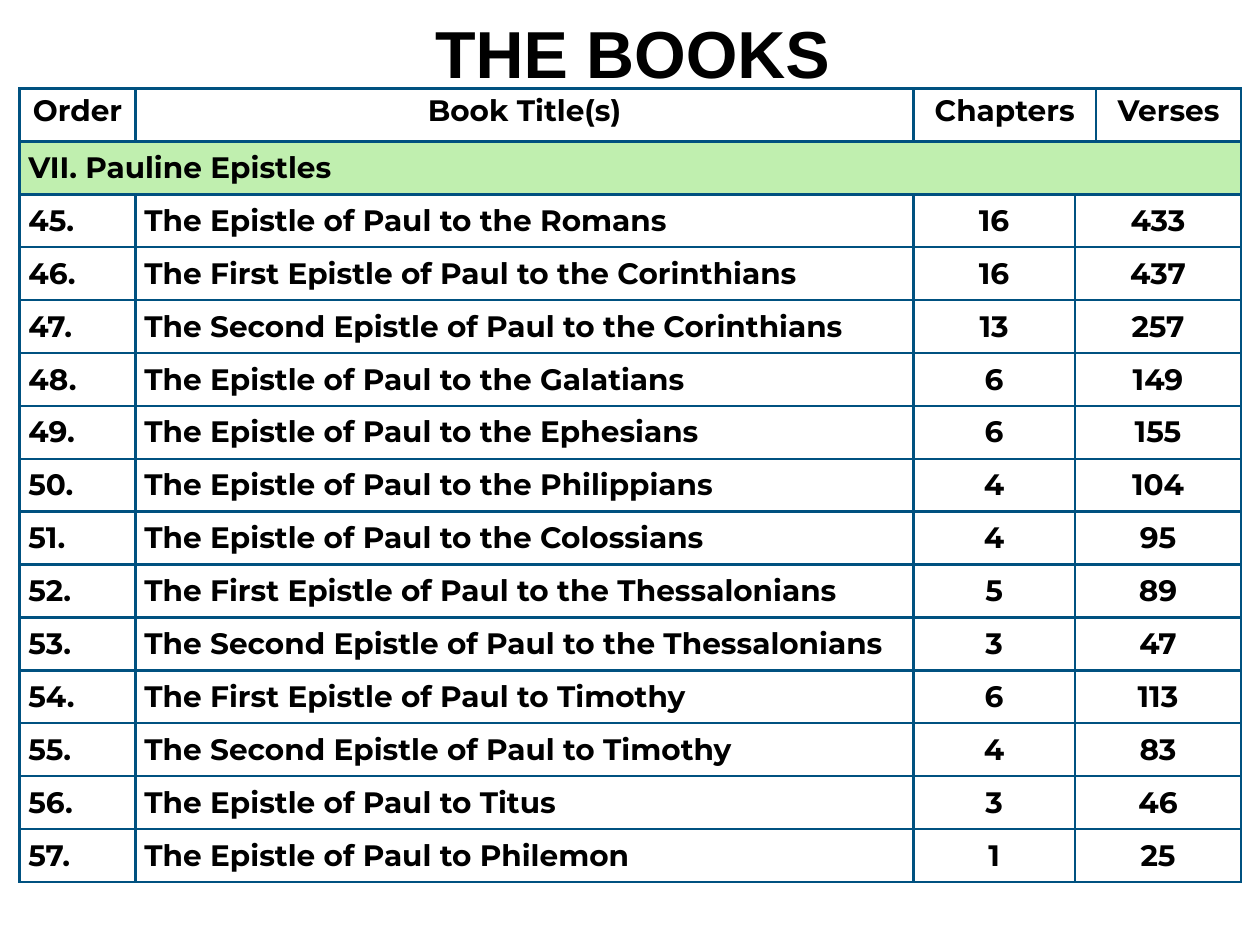
from dataclasses import dataclass
from typing import NamedTuple

from lxml import etree
from pptx import Presentation
from pptx.dml.color import RGBColor
from pptx.enum.text import MSO_ANCHOR, MSO_AUTO_SIZE, PP_ALIGN
from pptx.oxml.ns import qn
from pptx.util import Emu, Inches, Pt

LEFT, CENTER = PP_ALIGN.LEFT, PP_ALIGN.CENTER
TOP, MIDDLE = MSO_ANCHOR.TOP, MSO_ANCHOR.MIDDLE
NO_AUTOFIT = MSO_AUTO_SIZE.NONE

SLIDE_WIDTH, SLIDE_HEIGHT = Inches(14.22), Inches(10.67)
TITLE_ONLY_LAYOUT = 5


@dataclass(frozen=True)
class Theme:
    text: str = "000000"
    border: str = "005180"
    section_fill: str = "C0EFAF"
    title_font: str = "Arial"
    table_font: str = "Montserrat"
    title_size: float = 54
    table_size: float = 24
    border_width: float = 2.25
    title_inset: float = 0.06


class Box(NamedTuple):
    """A frame in percent of the slide's width and height."""
    left: float
    top: float
    width: float
    height: float


class Book(NamedTuple):
    title: str
    chapters: int
    verses: int


class CellContent(NamedTuple):
    text: str
    column: int
    last_column: int
    align: PP_ALIGN = LEFT
    anchor: MSO_ANCHOR = MIDDLE
    fill: str | None = None


THEME = Theme()
TITLE_BOX = Box(7.52, -5.53, 85.37, 22.12)
TABLE_LEFT, TABLE_TOP = 1.55, 9.37
COLUMN_WIDTHS = (9.21, 61.74, 12.8, 1.69, 11.53)
ROW_HEIGHT = 5.6
FIRST_ORDER = 45

HEADER = [
    CellContent("Order", 0, 0, CENTER, TOP),
    CellContent("Book Title(s)", 1, 1, CENTER, TOP),
    CellContent("Chapters", 2, 3, CENTER, TOP),
    CellContent("Verses", 4, 4, CENTER, TOP),
]
SECTION = [CellContent("VII. Pauline Epistles", 0, 4, fill=THEME.section_fill)]
BOOKS = [
    Book("The Epistle of Paul to the Romans", 16, 433),
    Book("The First Epistle of Paul to the Corinthians", 16, 437),
    Book("The Second Epistle of Paul to the Corinthians", 13, 257),
    Book("The Epistle of Paul to the Galatians", 6, 149),
    Book("The Epistle of Paul to the Ephesians", 6, 155),
    Book("The Epistle of Paul to the Philippians", 4, 104),
    Book("The Epistle of Paul to the Colossians", 4, 95),
    Book("The First Epistle of Paul to the Thessalonians", 5, 89),
    Book("The Second Epistle of Paul to the Thessalonians", 3, 47),
    Book("The First Epistle of Paul to Timothy", 6, 113),
    Book("The Second Epistle of Paul to Timothy", 4, 83),
    Book("The Epistle of Paul to Titus", 3, 46),
    Book("The Epistle of Paul to Philemon", 1, 25),
]


def across(percent: float) -> Emu:
    return Emu(round(SLIDE_WIDTH * percent / 100))


def down(percent: float) -> Emu:
    return Emu(round(SLIDE_HEIGHT * percent / 100))


def write_text(text_frame, text: str, *, font: str, size: float,
               align: PP_ALIGN = LEFT) -> None:
    paragraph = text_frame.paragraphs[0]
    paragraph.alignment = align
    run = paragraph.add_run()
    run.text = text
    run.font.name = font
    run.font.size = Pt(size)
    run.font.bold = True
    run.font.color.rgb = RGBColor.from_string(THEME.text)


def add_borders(cell) -> None:
    properties = cell._tc.get_or_add_tcPr()
    for index, side in enumerate(("a:lnL", "a:lnR", "a:lnT", "a:lnB")):
        line = etree.Element(qn(side), w=str(Pt(THEME.border_width)))
        fill = etree.SubElement(line, qn("a:solidFill"))
        etree.SubElement(fill, qn("a:srgbClr"), val=THEME.border)
        properties.insert(index, line)


def book_cells(order: int, book: Book) -> list[CellContent]:
    return [
        CellContent(f"{order}.", 0, 0),
        CellContent(book.title, 1, 1),
        CellContent(str(book.chapters), 2, 2, CENTER),
        CellContent(str(book.verses), 3, 4, CENTER),
    ]


def fill_cell(table, row: int, content: CellContent) -> None:
    cell = table.cell(row, content.column)
    if content.last_column > content.column:
        cell.merge(table.cell(row, content.last_column))
    cell.vertical_anchor = content.anchor
    if content.fill:
        cell.fill.solid()
        cell.fill.fore_color.rgb = RGBColor.from_string(content.fill)
    write_text(cell.text_frame, content.text, font=THEME.table_font,
               size=THEME.table_size, align=content.align)


def format_title(title) -> None:
    title.left, title.top = across(TITLE_BOX.left), down(TITLE_BOX.top)
    title.width, title.height = across(TITLE_BOX.width), down(TITLE_BOX.height)
    frame = title.text_frame
    frame.auto_size = NO_AUTOFIT
    frame.word_wrap = True
    frame.vertical_anchor = MIDDLE
    inset = Inches(THEME.title_inset)
    frame.margin_left = frame.margin_right = inset
    frame.margin_top = frame.margin_bottom = inset
    write_text(frame, "THE BOOKS", font=THEME.title_font,
               size=THEME.title_size, align=CENTER)


def add_book_table(slide) -> None:
    rows = [HEADER, SECTION]
    rows += [book_cells(order, book) for order, book in enumerate(BOOKS, FIRST_ORDER)]
    table = slide.shapes.add_table(
        len(rows), len(COLUMN_WIDTHS), across(TABLE_LEFT), down(TABLE_TOP),
        across(sum(COLUMN_WIDTHS)), down(ROW_HEIGHT * len(rows))).table
    table.first_row = table.horz_banding = False
    for column, width in zip(table.columns, COLUMN_WIDTHS):
        column.width = across(width)
    for row in table.rows:
        row.height = down(ROW_HEIGHT)
    for cell in table.iter_cells():
        cell.fill.background()
        add_borders(cell)
    for row_index, contents in enumerate(rows):
        for content in contents:
            fill_cell(table, row_index, content)


def main() -> None:
    presentation = Presentation()
    presentation.slide_width, presentation.slide_height = SLIDE_WIDTH, SLIDE_HEIGHT
    slide = presentation.slides.add_slide(presentation.slide_layouts[TITLE_ONLY_LAYOUT])
    format_title(slide.shapes.title)
    add_book_table(slide)
    presentation.save("out.pptx")


if __name__ == "__main__":
    main()
